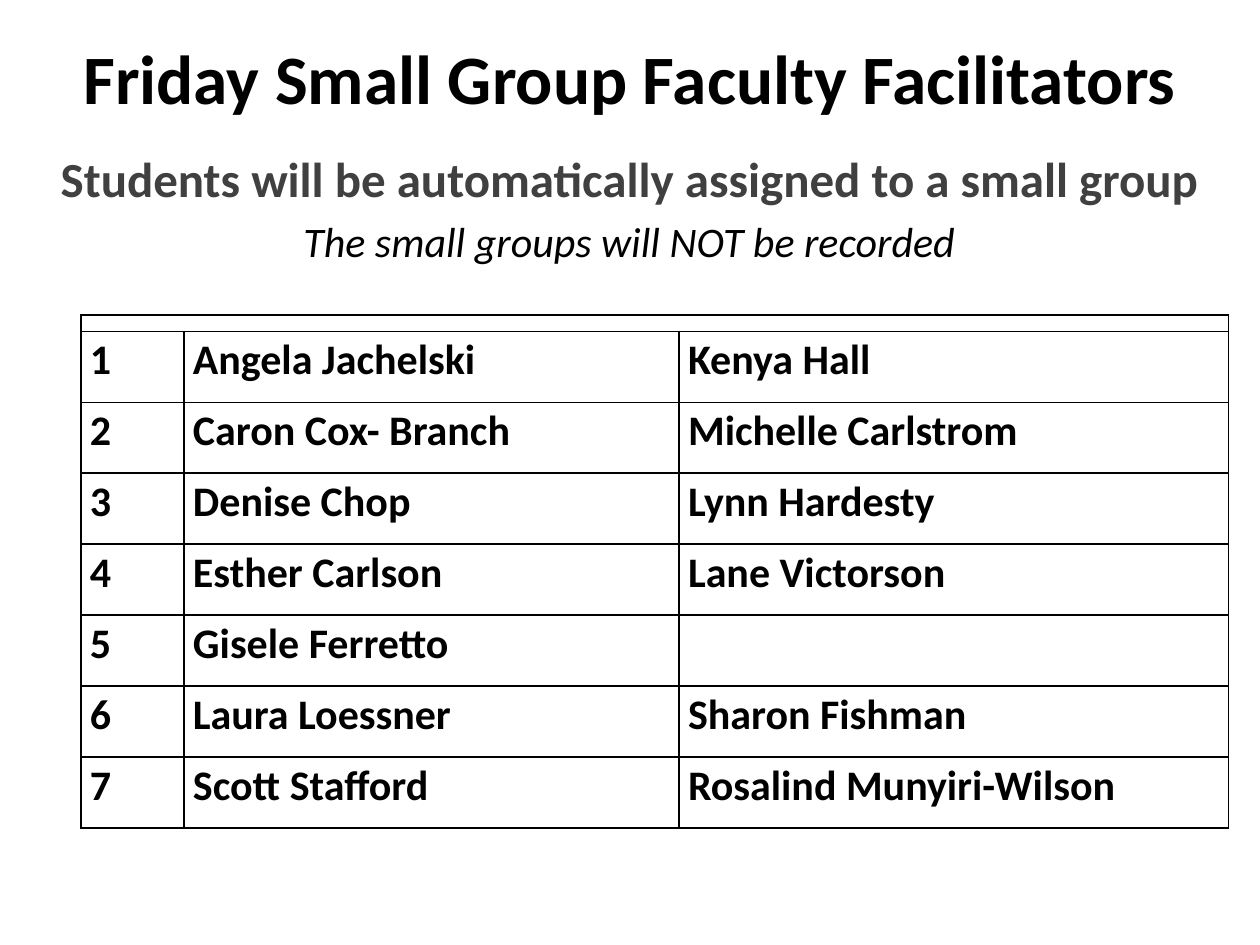
from typing import NamedTuple

from lxml import etree
from pptx import Presentation
from pptx.dml.color import RGBColor
from pptx.enum.text import MSO_ANCHOR, MSO_AUTO_SIZE, PP_ALIGN
from pptx.oxml.ns import qn
from pptx.util import Cm, Pt

MIDDLE = MSO_ANCHOR.MIDDLE
NO_FIT = MSO_AUTO_SIZE.NONE
CENTER = PP_ALIGN.CENTER

FONT = "Calibri"
COLORS = {"text": "000000", "lead": "404040", "line": "000000"}
COLS = (2.08, 9.98, 11.07)
HEAD_ROW, ROW = 0.33, 1.43


class Line(NamedTuple):
    text: str
    size: float
    color: str = "text"
    bold: bool = True
    italic: bool = False
    before: float = 0


class Group(NamedTuple):
    first: str
    second: str


TITLE = Line("Friday Small Group Faculty Facilitators", 39.6)
NOTES = (
    Line("Students will be automatically assigned to a small group", 28, "lead"),
    Line("The small groups will NOT be recorded", 24, bold=False, italic=True,
         before=4.8),
)
GROUPS = (
    Group("Angela Jachelski", "Kenya Hall"),
    Group("Caron Cox- Branch", "Michelle Carlstrom"),
    Group("Denise Chop", "Lynn Hardesty"),
    Group("Esther Carlson", "Lane Victorson"),
    Group("Gisele Ferretto", ""),
    Group("Laura Loessner", "Sharon Fishman"),
    Group("Scott Stafford", "Rosalind Munyiri-Wilson"),
)


def write(para, line: Line) -> None:
    para.text = line.text
    para.space_before = Pt(line.before)
    font = para.font
    font.name, font.size = FONT, Pt(line.size)
    font.bold, font.italic = line.bold, line.italic
    font.color.rgb = RGBColor.from_string(COLORS[line.color])


def place(shape, left: float, top: float, width: float, height: float) -> None:
    shape.left, shape.top = Cm(left), Cm(top)
    shape.width, shape.height = Cm(width), Cm(height)
    shape.text_frame.auto_size = NO_FIT


def add_notes(body) -> None:
    frame = body.text_frame
    for i, line in enumerate(NOTES):
        para = frame.add_paragraph() if i else frame.paragraphs[0]
        para.alignment = CENTER
        props = para._p.get_or_add_pPr()
        props.set("marL", "0")
        props.set("indent", "0")
        etree.SubElement(props, qn("a:buNone"))
        write(para, line)


def style_cell(cell) -> None:
    """Clear the fill and rule all four sides."""
    cell.margin_left = cell.margin_right = Cm(0.18)
    cell.margin_top = cell.margin_bottom = 0
    props = cell._tc.get_or_add_tcPr()
    for side in ("lnL", "lnR", "lnT", "lnB"):
        rule = etree.SubElement(props, qn(f"a:{side}"), w=str(Pt(1)))
        fill = etree.SubElement(rule, qn("a:solidFill"))
        etree.SubElement(fill, qn("a:srgbClr"), val=COLORS["line"])
    cell.fill.background()


def add_groups(slide) -> None:
    count = len(GROUPS)
    frame = slide.shapes.add_table(
        count + 1, len(COLS), Cm(1.63), Cm(6.35),
        Cm(sum(COLS)), Cm(HEAD_ROW + count * ROW))
    table = frame.table
    table.first_row = table.horz_banding = False
    for col, width in zip(table.columns, COLS):
        col.width = Cm(width)
    for i, row in enumerate(table.rows):
        row.height = Cm(ROW if i else HEAD_ROW)
        for cell in row.cells:
            style_cell(cell)
            if not i:  # keep the blank top row thin
                para = cell.text_frame.paragraphs[0]
                etree.SubElement(para._p, qn("a:endParaRPr"), sz="100")
    table.cell(0, 0).merge(table.cell(0, len(COLS) - 1))

    for i, group in enumerate(GROUPS, 1):
        for j, text in enumerate((str(i), *group)):
            if text:
                para = table.cell(i, j).text_frame.paragraphs[0]
                para.line_spacing, para.space_after = 1.07, Pt(8)
                write(para, Line(text, 24))


def main() -> None:
    deck = Presentation()
    deck.slide_width, deck.slide_height = Cm(25.4), Cm(19.05)
    slide = deck.slides.add_slide(deck.slide_layouts[1])

    title, body = slide.shapes.title, slide.placeholders[1]
    place(title, 1.27, 0.25, 22.86, 2.59)
    title.text_frame.vertical_anchor = MIDDLE
    para = title.text_frame.paragraphs[0]
    para.alignment = CENTER
    write(para, TITLE)

    place(body, 0.2, 2.87, 24.97, 15.7)
    add_notes(body)
    add_groups(slide)
    deck.save("out.pptx")


if __name__ == "__main__":
    main()
